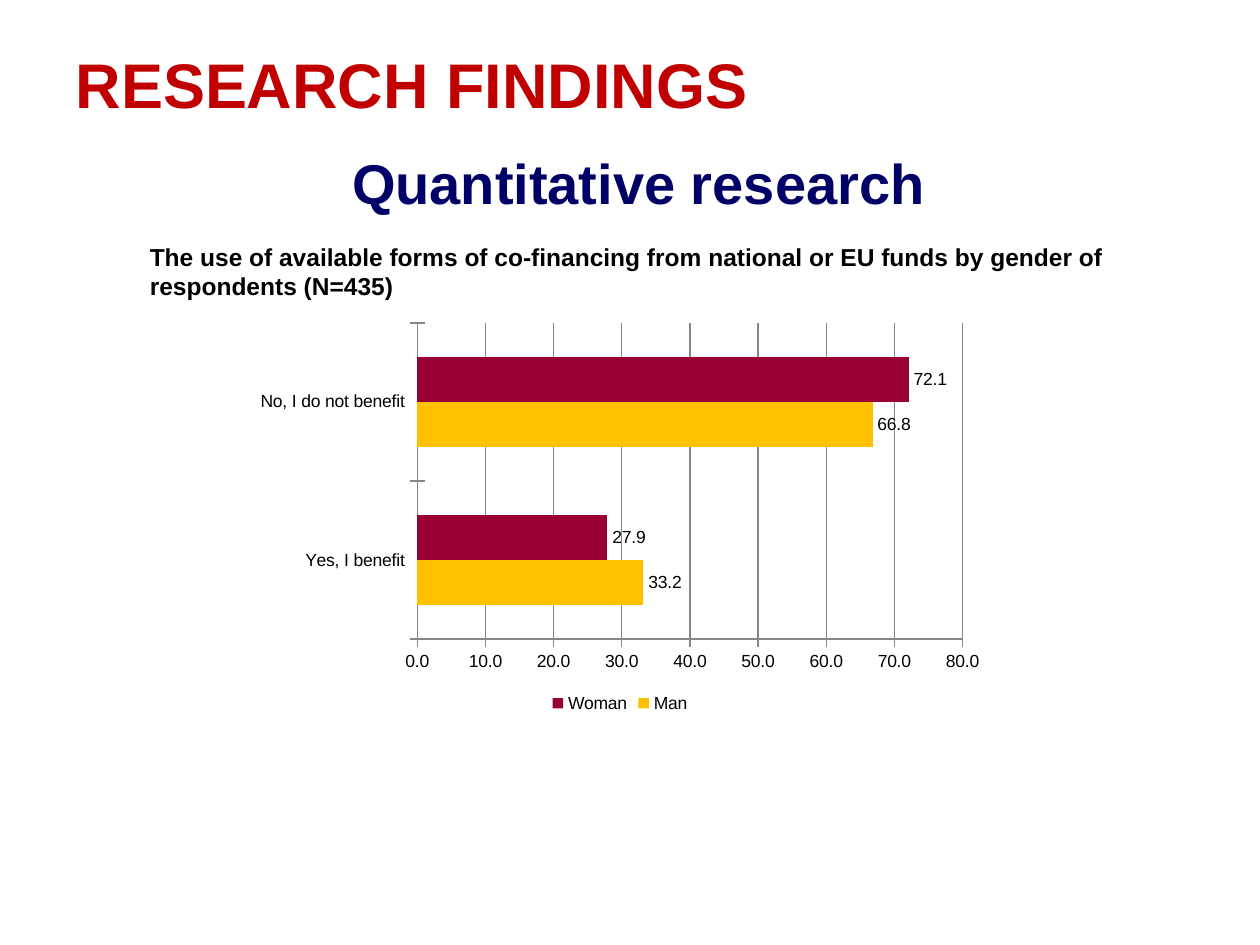
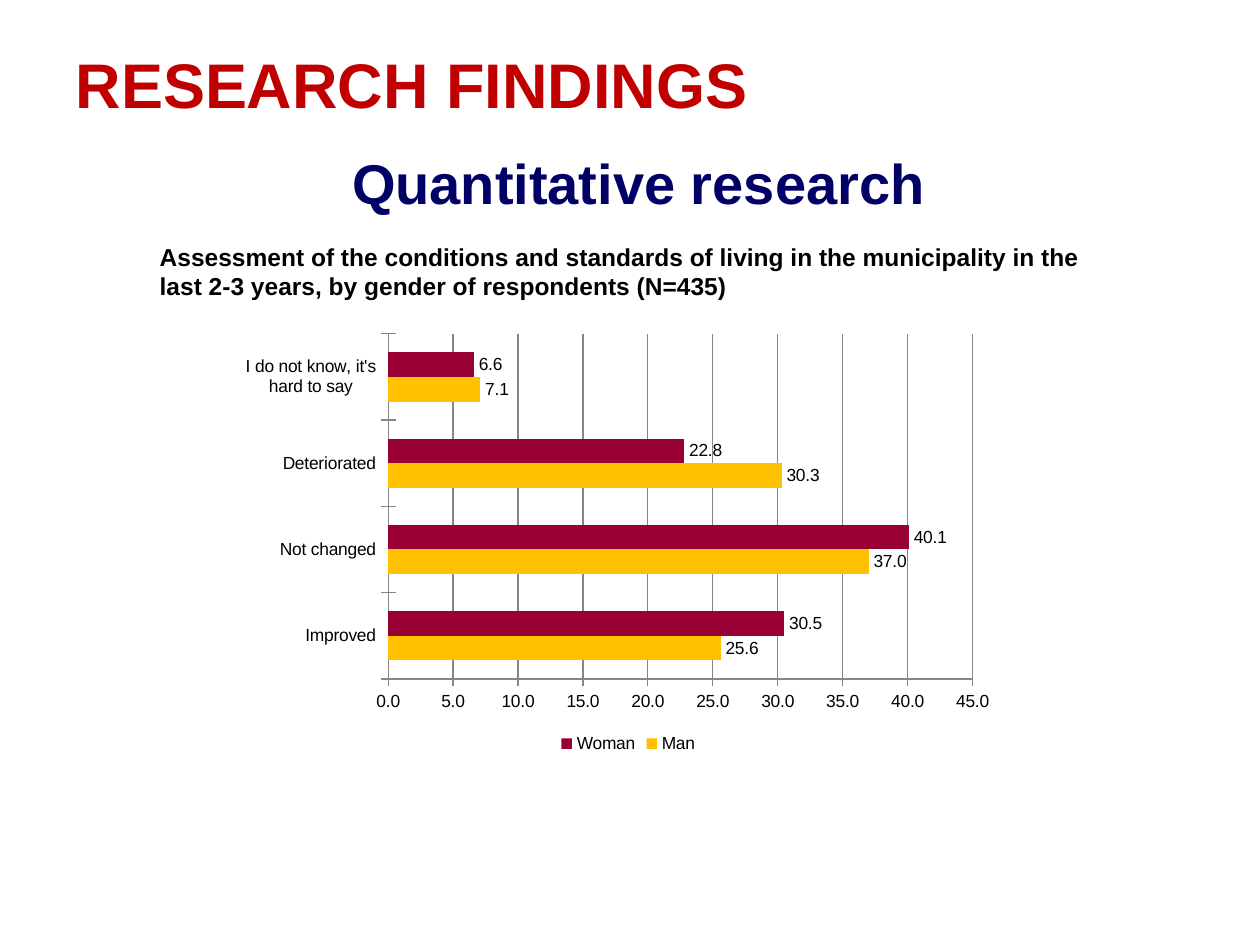
from pptx import Presentation
from pptx.chart.data import CategoryChartData
from pptx.dml.color import RGBColor
from pptx.enum.chart import XL_CHART_TYPE, XL_LABEL_POSITION, XL_LEGEND_POSITION, XL_TICK_MARK
from pptx.enum.text import MSO_ANCHOR, MSO_AUTO_SIZE, PP_ALIGN
from pptx.util import Pt

FACE = "Arial"
RED, NAVY, BLACK, GREY = "C00000", "000066", "000000", "868686"
HUES = {"Man": "FFC000", "Woman": "990033"}
TITLE_BOX = (36, 21.6, 648, 51.8)
HEAD_BOX = (62, 84.2, 606, 39.6)


def tint(code):
    """Turn a hex string into a colour."""
    return RGBColor.from_string(code)


def style(font, size, color=BLACK, bold=False):
    """Set the face, size, colour and weight of a font."""
    font.name, font.size, font.bold = FACE, Pt(size), bold
    font.color.rgb = tint(color)


def place(shape, box):
    """Move a shape to a box given in points."""
    shape.left, shape.top, shape.width, shape.height = map(Pt, box)


def write(shape, text, size, color=BLACK, align=PP_ALIGN.LEFT, fit=MSO_AUTO_SIZE.NONE):
    """Fill a shape with one bold, wrapped paragraph."""
    frame = shape.text_frame
    frame.word_wrap = True
    frame.auto_size = fit
    frame.vertical_anchor = MSO_ANCHOR.MIDDLE
    para = frame.paragraphs[0]
    para.alignment = align
    run = para.add_run()
    run.text = text
    style(run.font, size, color, True)


def add_head(slide):
    """Add the title and the heading that the slides share."""
    place(slide.shapes.title, TITLE_BOX)
    write(slide.shapes.title, "RESEARCH FINDINGS", 36, RED)
    head = slide.shapes.add_textbox(*map(Pt, HEAD_BOX))
    write(head, "Quantitative research", 32, NAVY, PP_ALIGN.CENTER)


def add_bars(slide, box, cats, rows):
    """Add a clustered bar chart with one series for each gender."""
    data = CategoryChartData(number_format="0.0")
    data.categories = cats
    for name, vals in rows.items():
        data.add_series(name, vals)
    chart = slide.shapes.add_chart(XL_CHART_TYPE.BAR_CLUSTERED, *map(Pt, box), data).chart
    style(chart.font, 10)
    chart.has_title = False
    chart.has_legend = True
    chart.legend.position = XL_LEGEND_POSITION.BOTTOM
    chart.legend.include_in_layout = False
    plot = chart.plots[0]
    plot.vary_by_categories = False
    plot.gap_width, plot.overlap = 150, 0
    for bars in plot.series:
        bars.format.fill.solid()
        bars.format.fill.fore_color.rgb = tint(HUES[bars.name])
        labels = bars.data_labels
        labels.show_value = True
        labels.number_format, labels.number_format_is_linked = "0.0", False
        labels.position = XL_LABEL_POSITION.OUTSIDE_END
    scale = chart.value_axis
    scale.has_major_gridlines = True
    scale.tick_labels.number_format = "0.0"
    scale.tick_labels.number_format_is_linked = False
    for axis in (scale, chart.category_axis):
        axis.major_tick_mark = XL_TICK_MARK.CROSS
        axis.minor_tick_mark = XL_TICK_MARK.NONE
    for part in (scale, chart.category_axis, scale.major_gridlines):
        part.format.line.color.rgb = tint(GREY)
        part.format.line.width = Pt(0.75)


def add_slide(deck, text, text_box, chart_box, cats, rows):
    """Add a findings slide with a caption above its chart."""
    slide = deck.slides.add_slide(deck.slide_layouts[5])
    note = slide.shapes.add_textbox(*map(Pt, text_box))
    write(note, text, 14, fit=MSO_AUTO_SIZE.SHAPE_TO_FIT_TEXT)
    add_head(slide)
    add_bars(slide, chart_box, cats, rows)


def main():
    """Build and save the deck."""
    deck = Presentation()
    deck.slide_width, deck.slide_height = Pt(720), Pt(540)
    add_slide(
        deck,
        "The use of available forms of co-financing from national or EU funds "
        "by gender of respondents (N=435)",
        (78.5, 134.6, 579.6, 41),
        (140.4, 180, 427.7, 230.4),
        ["Yes, I benefit", "No, I do not benefit"],
        {"Man": (33.2, 66.8), "Woman": (27.9, 72.1)},
    )
    add_slide(
        deck,
        "Assessment of the conditions and standards of living in the municipality "
        "in the last 2-3 years, by gender of respondents (N=435)",
        (84.2, 134.6, 556.6, 41),
        (140.4, 185.8, 433.4, 247.7),
        ["Improved", "Not changed", "Deteriorated", "I do not know, it's hard to say"],
        {"Man": (25.6, 37, 30.3, 7.1), "Woman": (30.5, 40.1, 22.8, 6.6)},
    )
    deck.save("out.pptx")


if __name__ == "__main__":
    main()
